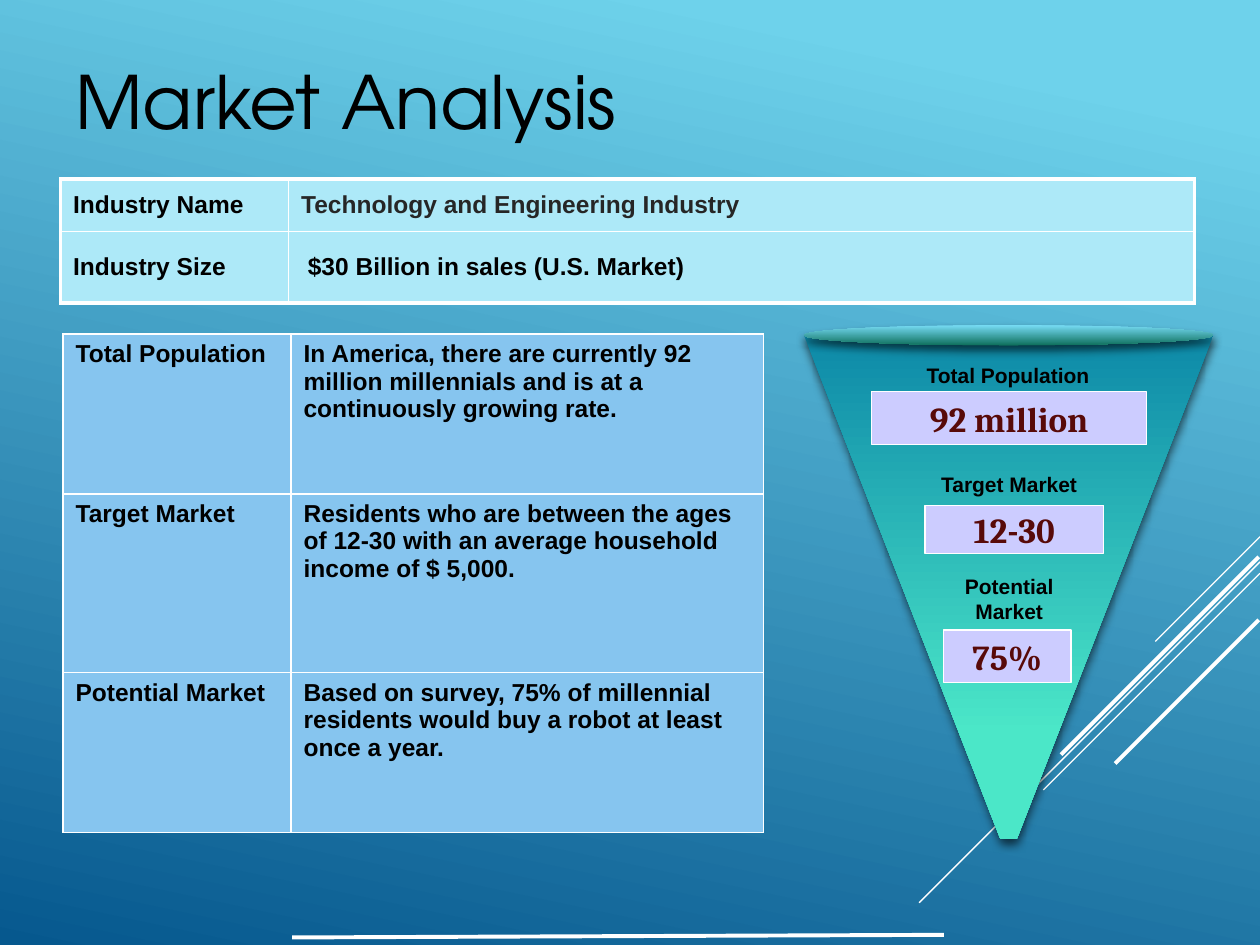
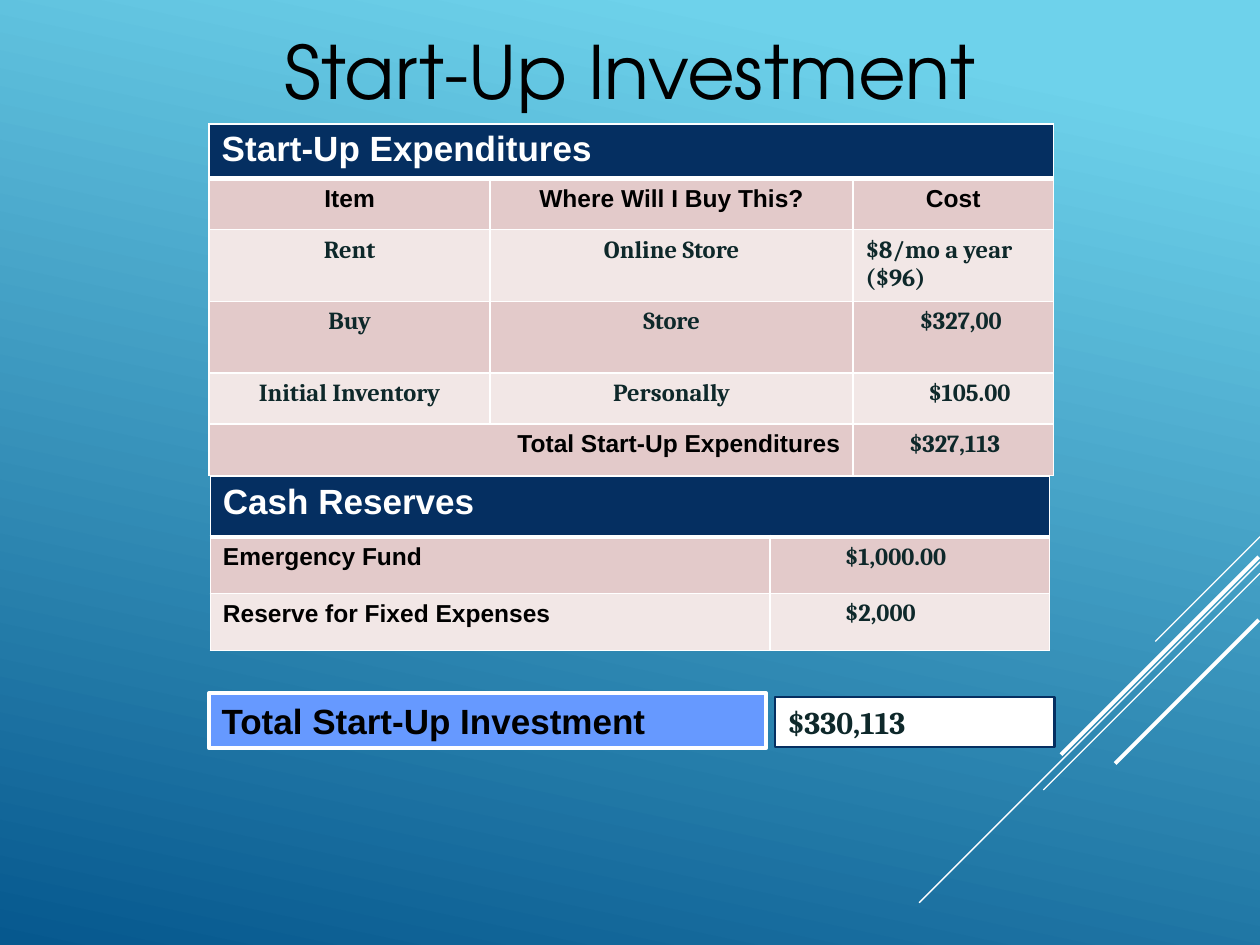
from lxml.etree import SubElement
from pptx import Presentation
from pptx.dml.color import RGBColor as RGB
from pptx.enum.shapes import MSO_CONNECTOR, MSO_SHAPE
from pptx.enum.text import MSO_ANCHOR, PP_ALIGN
from pptx.oxml.ns import qn
from pptx.util import Pt


class Theme:
    sky = [(0.1, "6ED2EB"), (1, "06588E")]
    cone = [(0, "0D89A8"), (0.79, "4BE7C8")]
    lid = [(0, "76DBF4"), (1, "0F705D")]
    white, navy, lilac, cornflower = "FFFFFF", "052F61", "CCCCFF", "6699FF"
    aqua, pale_blue, rose, blush = "ADE9F8", "86C5EF", "E3CACA", "F2E7E6"
    title = dict(name="TeX Gyre Adventor", size=42, bold=False, color="000000")
    label = dict(name="Arial", size=14, bold=True, color="000000")
    soft = label | dict(color="262626")
    small = label | dict(size=12)
    large = label | dict(size=20)
    header = large | dict(color=white)
    value = dict(name="Cambria", size=14, bold=True, color="0E282A")
    total = value | dict(size=18)
    figure = value | dict(size=20, color="580A09")


T = Theme
LEFT, CENTER, RIGHT = PP_ALIGN.LEFT, PP_ALIGN.CENTER, PP_ALIGN.RIGHT
TOP, MIDDLE = MSO_ANCHOR.TOP, MSO_ANCHOR.MIDDLE


def write(tf, text, style, align=LEFT, **frame):
    for name, val in frame.items():
        setattr(tf, name, val)
    p = tf.paragraphs[0]
    p.alignment = align
    r = p.add_run()
    r.text = text
    for name, val in (style | dict(size=Pt(style["size"]))).items():
        if name == "color":
            r.font.color.rgb = RGB.from_string(val)
        else:
            setattr(r.font, name, val)


def add_grid(s, left, top, cols, rows, fills, cells, outer=1, head=1, anchor=TOP):
    box = [Pt(v) for v in (left, top, sum(cols), sum(rows))]
    table = s.shapes.add_table(len(rows), len(cols), *box).table
    table.first_row = table.horz_banding = False
    for col, width in zip(table.columns, cols):
        col.width = Pt(width)
    for i, (height, fill, line) in enumerate(zip(rows, fills, cells)):
        table.rows[i].height = Pt(height)
        for j, content in enumerate(line):
            cell = table.cell(i, j)
            cell.vertical_anchor = anchor
            cell.fill.solid()
            cell.fill.fore_color.rgb = RGB.from_string(fill)
            edges = {
                "a:lnL": outer if j == 0 else 1,
                "a:lnR": outer if j == len(cols) - 1 else 1,
                "a:lnT": outer if i == 0 else head if i == 1 else 1,
                "a:lnB": outer if i == len(rows) - 1 else head if i == 0 else 1,
            }
            tcPr = cell._tc.get_or_add_tcPr()
            for k, (tag, width) in enumerate(edges.items()):
                ln = SubElement(tcPr, qn(tag), w=str(Pt(width)))
                SubElement(SubElement(ln, qn("a:solidFill")), qn("a:srgbClr"), val=T.white)
                tcPr.insert(k, ln)
            if content:
                text, style, align, *indent = content
                write(cell.text_frame, text, style, align)
                for gap in indent:
                    cell.margin_left = Pt(gap)
        for j in range(len(line) - 1, 0, -1):
            if line[j] is None and line[j - 1]:
                table.cell(i, j - 1).merge(table.cell(i, len(line) - 1 if i == 0 else j))


prs = Presentation()
prs.slide_width, prs.slide_height = Pt(720), Pt(540)

titles = [
    ("Market Analysis", LEFT, 18, 77.8),
    ("Start-Up Investment", CENTER, 8.6, 62.6),
]
rays = [
    (720, 306.7, 59.8, 0.75),
    (720, 321.1, 194.8, 0.75),
    (720, 327.6, 123.8, 0.75),
    (719.3, 318.2, 113, 2.25),
    (719.3, 354.2, 82.1, 2.25),
]
gradients, lines = [], []
for text, align, top, height in titles:
    s = prs.slides.add_slide(prs.slide_layouts[6])
    gradients.append((s.background.fill, T.sky, 258))
    lines += [(s, x, y, x - reach, y + reach, w) for x, y, reach, w in rays]
market, startup = prs.slides
lines.append((market, 167, 535.7, 539.3, 534.2, 2.25))

for s, x1, y1, x2, y2, width in lines:
    ray = s.shapes.add_connector(MSO_CONNECTOR.STRAIGHT, *[Pt(v) for v in (x1, y1, x2, y2)])
    ray.line.color.rgb = RGB.from_string(T.white)
    ray.line.width = Pt(width)
    SubElement(ray._element.spPr, qn("a:effectLst"))

for s, (text, align, top, height) in zip(prs.slides, titles):
    sp = s.shapes.add_textbox(Pt(36), Pt(top), Pt(648), Pt(height))
    write(sp.text_frame, text, T.title, align, word_wrap=True, vertical_anchor=MIDDLE)

add_grid(market, 34.6, 102.2, [130.3, 517.7], [30, 41], [T.aqua] * 2, [
    [("Industry Name", T.label, LEFT), ("Technology and Engineering Industry", T.soft, LEFT)],
    [("Industry Size", T.label, LEFT), ("$30 Billion in sales (U.S. Market)", T.label, LEFT, 11)],
], outer=2.25, anchor=MIDDLE)

segments = [
    ("Total Population",
     "In America, there are currently 92 million millennials and is at a continuously growing rate."),
    ("Target Market",
     "Residents who are between the ages of 12-30 with an average household income of $ 5,000."),
    ("Potential Market",
     "Based on survey, 75% of millennial residents would buy a robot at least once a year."),
]
add_grid(market, 36, 190.8, [130.3, 270], [91.4, 102.2, 91.4], [T.pale_blue] * 3,
         [[(text, T.label, LEFT) for text in pair] for pair in segments])

outline = market.shapes.build_freeform(Pt(459.4), Pt(191.5))
outline.add_line_segments([(Pt(x), Pt(y)) for x, y in [(571.7, 479.5), (581, 479.5), (693.4, 191.5)]])
cone = outline.convert_to_shape()
lid = market.shapes.add_shape(MSO_SHAPE.OVAL, Pt(459.4), Pt(185.8), Pt(234), Pt(11.5))
for sp, stops in [(cone, T.cone), (lid, T.lid)]:
    gradients.append((sp.fill, stops, 270))
    sp.line.fill.background()
    sp.shadow.inherit = False
    effects = sp._element.spPr.find(qn("a:effectLst"))
    shadow = SubElement(effects, qn("a:outerShdw"), blurRad=str(Pt(5)), dist=str(Pt(3)),
                        dir="5400000", rotWithShape="0")
    color = SubElement(shadow, qn("a:srgbClr"), val="000000")
    SubElement(color, qn("a:alpha"), val="60000")

for fill, stops, angle in gradients:
    fill.gradient()
    fill.gradient_angle = angle
    for stop, (position, color) in zip(fill.gradient_stops, stops):
        stop.position = position
        stop.color.rgb = RGB.from_string(color)

for text, *box in [
    ("Total Population", 497.5, 203.8, 157, 21.6),
    ("Target Market", 498.2, 265.7, 157, 21.6),
    ("Potential Market", 525.6, 324, 102.2, 36.7),
]:
    sp = market.shapes.add_textbox(*[Pt(v) for v in box])
    write(sp.text_frame, text, T.small, CENTER, word_wrap=True)

add_grid(startup, 119.5, 70.8, [160.6, 207.4, 114.5], [31.2, 29.2, 41, 41, 29.2, 29.2],
         [T.navy, T.rose, T.blush, T.rose, T.blush, T.rose], [
    [("Start-Up Expenditures", T.header, LEFT), None, None],
    [(text, T.label, CENTER) for text in ("Item", "Where Will I Buy This?", "Cost")],
    [("Rent", T.value, CENTER), ("Online Store", T.value, CENTER), ("$8/mo a year ($96)", T.value, LEFT)],
    [("Buy", T.value, CENTER), ("Store", T.value, CENTER), ("$327,00", T.value, LEFT, 38)],
    [("Initial Inventory", T.value, CENTER), ("Personally", T.value, CENTER), ("$105.00", T.value, LEFT, 43)],
    [("Total Start-Up Expenditures", T.label, RIGHT), None, ("$327,113", T.value, LEFT, 32)],
], head=3)

add_grid(startup, 120.2, 272.2, [319.7, 159.8], [34.6, 32.4, 32.4], [T.navy, T.rose, T.blush], [
    [("Cash Reserves", T.header, LEFT), None],
    [("Emergency Fund", T.label, LEFT), ("$1,000.00", T.value, LEFT, 43)],
    [("Reserve for Fixed Expenses", T.label, LEFT), ("$2,000", T.value, LEFT, 43)],
], head=3)

process, rect = MSO_SHAPE.FLOWCHART_PROCESS, MSO_SHAPE.RECTANGLE
figure = (process, T.lilac, T.white, 0.75, T.figure, CENTER, MIDDLE)
panels = [
    (market, "92 million", (498.2, 223.9, 157, 30.2), figure),
    (market, "75%", (539.3, 360, 72.7, 30.2), figure),
    (market, "12-30", (528.5, 288.7, 102.2, 27.4), figure),
    (startup, "$330,113", (442.8, 398.2, 159.8, 28.8),
     (rect, T.white, T.navy, 1.5, T.total, LEFT, TOP)),
    (startup, "Total Start-Up Investment", (119.5, 396, 318.2, 31.7),
     (rect, T.cornflower, T.white, 2.25, T.large, LEFT, TOP)),
]
for s, text, box, (kind, fill, edge, width, style, align, anchor) in panels:
    sp = s.shapes.add_shape(kind, *[Pt(v) for v in box])
    sp.shadow.inherit = False
    sp.fill.solid()
    sp.fill.fore_color.rgb = RGB.from_string(fill)
    sp.line.color.rgb = RGB.from_string(edge)
    sp.line.width = Pt(width)
    write(sp.text_frame, text, style, align, word_wrap=True, vertical_anchor=anchor)

prs.save("out.pptx")
